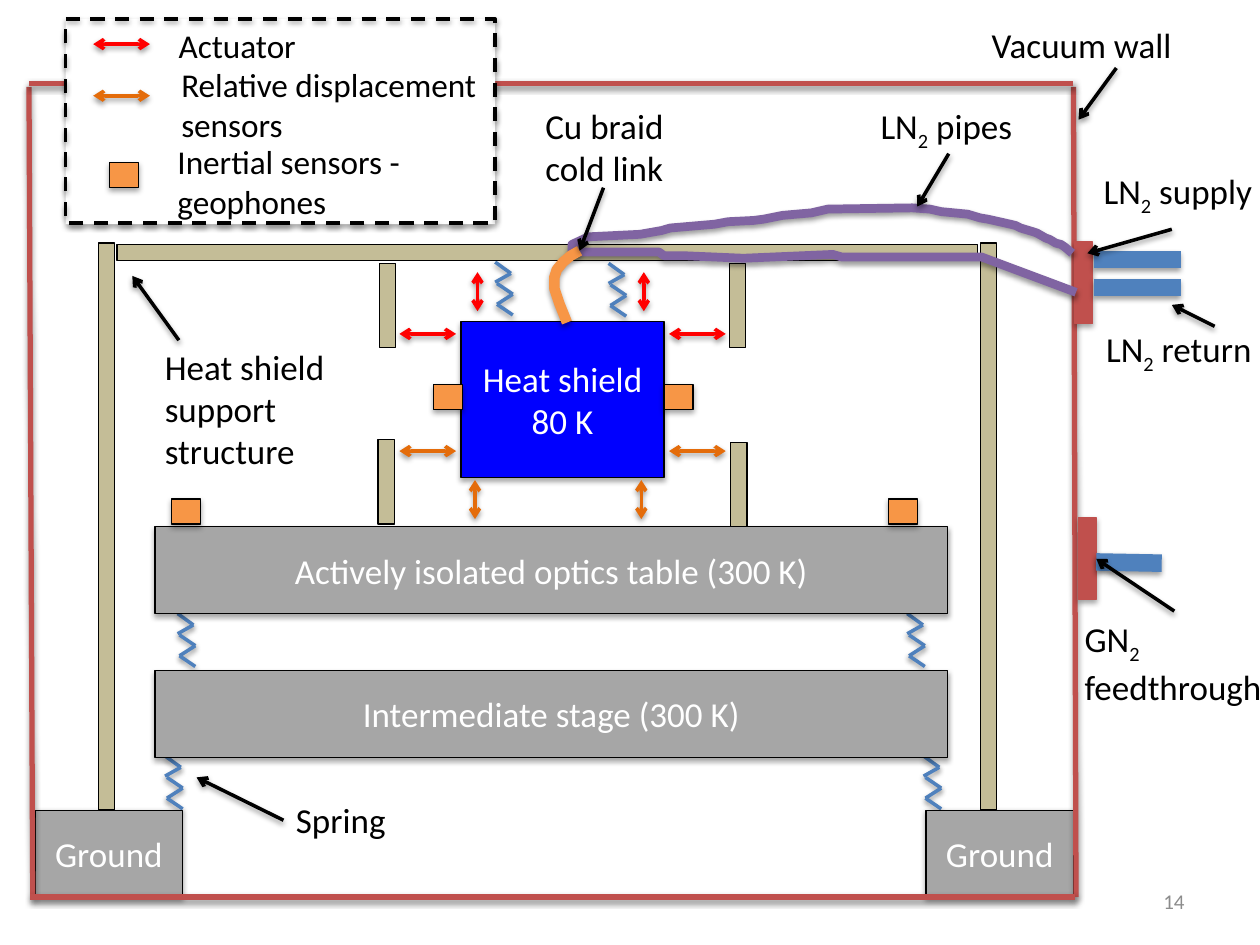
from dataclasses import dataclass

from lxml import etree
from pptx import Presentation
from pptx import util as u
from pptx.dml.color import RGBColor
from pptx.enum import dml, shapes, text
from pptx.oxml import ns

C = {
    "black": "000000", "white": "FFFFFF", "grey": "A6A6A6", "page": "8C8C8C",
    "blue": "0000FF", "steel": "4F81BD", "wall": "C0504D", "red": "FF0000",
    "rust": "E46C0A", "tan": "C4BD97", "orange": "F79646", "purple": "8064A2",
}
W, H = u.Inches(10), u.Inches(7.5)
COL, ROW = W / 100, H / 75


@dataclass
class Box:
    x: float
    y: float
    w: float
    h: float
    fill: str = ""
    line: str = "black"
    words: tuple = ()
    shadow: bool = True
    weight: float = 0.75
    dash: bool = False


@dataclass
class Line:
    x1: float
    y1: float
    x2: float
    y2: float
    color: str = "black"
    weight: float = 2
    head: bool = False
    tail: bool = False


@dataclass
class Label:
    x: float
    y: float
    w: float
    h: float
    words: tuple
    size: float = 20
    color: str = "black"
    align: text.PP_ALIGN = text.PP_ALIGN.LEFT
    anchor: text.MSO_ANCHOR = text.MSO_ANCHOR.TOP


def place(x: float, y: float) -> tuple:
    return round(x * COL), round(y * ROW)


def rgb(name: str) -> RGBColor:
    return RGBColor.from_string(C[name])


def add_effects(s, alpha: int = 0) -> None:
    effects = s._element.spPr.find(ns.qn("a:effectLst"))
    if effects is None:
        effects = etree.SubElement(s._element.spPr, ns.qn("a:effectLst"))
    if alpha:
        shadow = etree.SubElement(effects, ns.qn("a:outerShdw"), blurRad="40000",
                                  dist="22000", dir="5400000", rotWithShape="0")
        color = etree.SubElement(shadow, ns.qn("a:srgbClr"), val=C["black"])
        etree.SubElement(color, ns.qn("a:alpha"), val=str(alpha * 1000))


def write(tf, words: tuple, size: float, color: str, align) -> None:
    tf.word_wrap = True
    for i, row in enumerate(words):
        p = tf.add_paragraph() if i else tf.paragraphs[0]
        p.alignment = align
        for j, part in enumerate(row.split("|")):
            r = p.add_run()
            r.text = part
            r.font.size, r.font.name = u.Pt(size), "Calibri"
            r.font.color.rgb = rgb(color)
            if j % 2:
                r._r.get_or_add_rPr().set("baseline", "-25000")


def draw_box(sp, b: Box):
    s = sp.add_shape(shapes.MSO_SHAPE.RECTANGLE, *place(b.x, b.y), *place(b.w, b.h))
    s.shadow.inherit = False
    if b.fill:
        s.fill.solid()
        s.fill.fore_color.rgb = rgb(b.fill)
    else:
        s.fill.background()
    if b.line:
        s.line.color.rgb = rgb(b.line)
        s.line.width = u.Pt(b.weight)
    else:
        s.line.fill.background()
    if b.dash:
        s.line.dash_style = dml.MSO_LINE.DASH
    if b.shadow:
        add_effects(s, 35)
    if b.words:
        s.text_frame.vertical_anchor = text.MSO_ANCHOR.MIDDLE
        write(s.text_frame, b.words, 20, "white", text.PP_ALIGN.CENTER)
    return s


def draw_line(sp, n: Line):
    s = sp.add_connector(shapes.MSO_CONNECTOR.STRAIGHT, *place(n.x1, n.y1), *place(n.x2, n.y2))
    s.line.color.rgb = rgb(n.color)
    s.line.width = u.Pt(n.weight)
    for tag, wanted in (("a:headEnd", n.head), ("a:tailEnd", n.tail)):
        if wanted:
            etree.SubElement(s.line._get_or_add_ln(), ns.qn(tag), type="arrow")
    add_effects(s, 38)
    return s


def draw_label(sp, t: Label) -> None:
    tf = sp.add_textbox(*place(t.x, t.y), *place(t.w, t.h)).text_frame
    tf.vertical_anchor = t.anchor
    write(tf, t.words, t.size, t.color, t.align)


def draw_spring(sp, x: float, y: float) -> None:
    g = sp.add_group_shape().shapes
    upper = [(0, 0), (1.25, 0.9), (0, 1.6)]
    lower = [(0.15, 1.7), (1.4, 2.55), (0.15, 3.35), (1.4, 4.2)]
    for zigzag in (upper, lower):
        for (ax, ay), (bx, by) in zip(zigzag, zigzag[1:]):
            draw_line(g, Line(x + ax, y + ay, x + bx, y + by, "steel"))


def draw_curve(sp, points: list, color: str, weight: float) -> None:
    pts = [place(x, y) for x, y in points]
    fb = sp.build_freeform(*pts[0])
    fb.add_line_segments(pts[1:], close=False)
    s = fb.convert_to_shape()
    s.shadow.inherit = False
    s.fill.background()
    s.line.color.rgb = rgb(color)
    s.line.width = u.Pt(weight)
    add_effects(s, 38)


def sensor(x: float, y: float) -> Box:
    return Box(x, y, 2.3, 2, "orange")


def post(x: float, y: float, h: float) -> Box:
    return Box(x, y, 1.3, h, "tan", shadow=False)


def double_arrow(x: float, y: float, dx: float, dy: float, color: str) -> Line:
    return Line(x, y, x + dx, y + dy, color, head=True, tail=True)


SPRINGS = [(13.1, 60), (14.1, 48.7), (73.3, 60), (72, 48.7), (39.3, 20.8), (48.3, 20.9)]
STAGES = [
    Box(12.3, 41.8, 62.9, 6.9, "grey", words=("Actively isolated optics table (300 K)",)),
    Box(12.3, 53.2, 62.9, 6.9, "grey", words=("Intermediate stage (300 K)",)),
    *(Box(x, 64.3, 11.7, 6.9, "grey", words=("Ground",)) for x in (73.5, 2.8)),
    Box(36.6, 25.5, 16.1, 12.4, "blue", words=("Heat shield", "80 K")),
]
WALLS = [
    Line(85.2, 6.9, 85.4, 71.2, "wall", 3), Line(2.3, 6.9, 2.6, 71.2, "wall", 3),
    Line(85.2, 6.6, 2.3, 6.6, "wall", 3), Line(85.3, 71.2, 2.4, 71.2, "wall", 3),
]
FEEDS = [
    Line(86.8, 20.6, 93.7, 20.6, "steel", 10), Line(86.8, 22.8, 93.7, 22.8, "steel", 10),
    Line(87, 44.6, 92.2, 44.7, "steel", 10),
]
FRAME = [
    post(30, 34.9, 6.7), post(58, 35.1, 6.7), post(30.1, 20.9, 6.7), post(57.9, 20.9, 6.7),
    post(7.8, 19.3, 45), Box(9.3, 19.4, 68.3, 1.3, "tan", shadow=False), post(77.8, 19.3, 45),
    sensor(52.7, 30.5), sensor(34.4, 30.5), sensor(70.5, 39.6), sensor(13.6, 39.6),
]
GAUGES = [
    *(double_arrow(x, y, 4.5, 0, c) for y, c in ((35.8, "rust"), (26.5, "red"))
      for x in (31.7, 53.1)),
    *(double_arrow(x, y, 0, -3.1, c) for y, c, left in ((41.2, "rust", 37.7), (24.7, "red", 37.9))
      for x in (left, left + 13.2)),
]
PIPES = [
    (85.1, 20.1), (84.5, 19.6), (84.2, 19.4), (83.8, 19.3), (83.3, 19), (83, 18.9),
    (82.3, 18.5), (82, 18.4), (81, 18.1), (80.6, 17.9), (80.2, 17.8), (78.4, 17.4),
    (77.8, 17.3), (76.8, 17), (74.7, 16.8), (73.8, 16.6), (72.4, 16.5), (65.7, 16.6),
    (64.4, 16.9), (63.2, 17), (62.1, 17.1), (60.6, 17.4), (59.8, 17.5), (57.8, 17.6),
    (56.7, 17.8), (53.2, 18.1), (52.5, 18.3), (50.8, 18.6), (46.7, 18.8), (45.4, 19.4),
    (45.4, 20), (49.4, 20), (52.3, 20), (52.7, 20.3), (54.3, 20.3), (59, 20.5),
    (66.1, 20.2), (66.8, 20.4), (77.9, 20.4), (85.4, 23.2),
]
BRAID = [(46, 19.9), (45.3, 20.3), (44.7, 20.8), (44.2, 21.4), (44, 22), (44, 22.9),
         (44.4, 24.1), (44.8, 25.1), (45, 25.6)]
POINTERS = [
    Line(*ends, tail=True) for ends in (
        (96.4, 25.9, 93, 24.2), (88.6, 5.4, 85.6, 9.5), (93, 18.2, 86.3, 20.1),
        (75.3, 12.2, 72.8, 16.4), (22.5, 65.1, 15.6, 61.7), (14.2, 27, 10.5, 21.9),
        (47.9, 14.9, 46, 19.9))
]
LABELS = [
    Label(85.1, 48.5, 16.1, 7.7, ("GN|2 |feedthrough",)),
    Label(86.8, 25.5, 13.9, 4.4, ("LN|2| return",)),
    Label(86.6, 13, 13.9, 4.4, ("LN|2| supply",)),
    Label(75.3, 1.4, 21.1, 4.4, ("Vacuum wall",), align=text.PP_ALIGN.CENTER),
    Label(68.9, 7.8, 12.7, 4.4, ("LN|2| pipes",)),
    Label(22.5, 62.9, 11.2, 4.4, ("Spring",)),
    Label(12.1, 26.9, 16.3, 11.1, ("Heat shield support structure",)),
    Label(42.3, 7.8, 12.7, 7.7, ("Cu braid", "cold link")),
    Label(71.7, 69.5, 23.3, 4, ("14",), 12, "page", text.PP_ALIGN.RIGHT, text.MSO_ANCHOR.MIDDLE),
]
LEGEND = [
    Box(5.2, 1.5, 34.1, 16.3, "white", ""),
    double_arrow(7.4, 7.6, 4.5, 0, "rust"), double_arrow(7.4, 3.5, 4.5, 0, "red"),
    Label(13.2, 1.5, 12, 4.2, ("Actuator",), 19),
    Label(13.4, 4.6, 25.9, 7.4, ("Relative displacement sensors",), 19),
    Box(5.2, 1.5, 34.1, 16.2, weight=2, dash=True), sensor(8.7, 12.9),
    Label(13.1, 10.7, 20.8, 7.4, ("Inertial sensors - geophones",), 19),
]
DRAW = {Box: draw_box, Line: draw_line, Label: draw_label}


def draw_all(sp, items: list) -> None:
    for item in items:
        DRAW[type(item)](sp, item)


def main() -> None:
    prs = Presentation()
    prs.slide_width, prs.slide_height = W, H
    sp = prs.slides.add_slide(prs.slide_layouts[6]).shapes
    for x, y in SPRINGS:
        draw_spring(sp, x, y)
    draw_all(sp, STAGES + WALLS)
    draw_box(sp, Box(85.3, 19.2, 1.4, 6.5, "wall", "wall"))
    gas_flange = draw_box(sp, Box(85.6, 41.1, 1.4, 6.5, "wall", "wall"))
    draw_all(sp, FEEDS + FRAME + GAUGES)
    draw_curve(sp, PIPES, "purple", 5)
    draw_curve(sp, BRAID, "orange", 6)
    draw_all(sp, POINTERS)
    draw_line(sp, Line(93.2, 48.5, 87, 44.3, tail=True)).end_connect(gas_flange, 3)
    draw_all(sp, LABELS)
    draw_all(sp.add_group_shape().shapes, LEGEND)
    prs.save("out.pptx")


if __name__ == "__main__":
    main()
